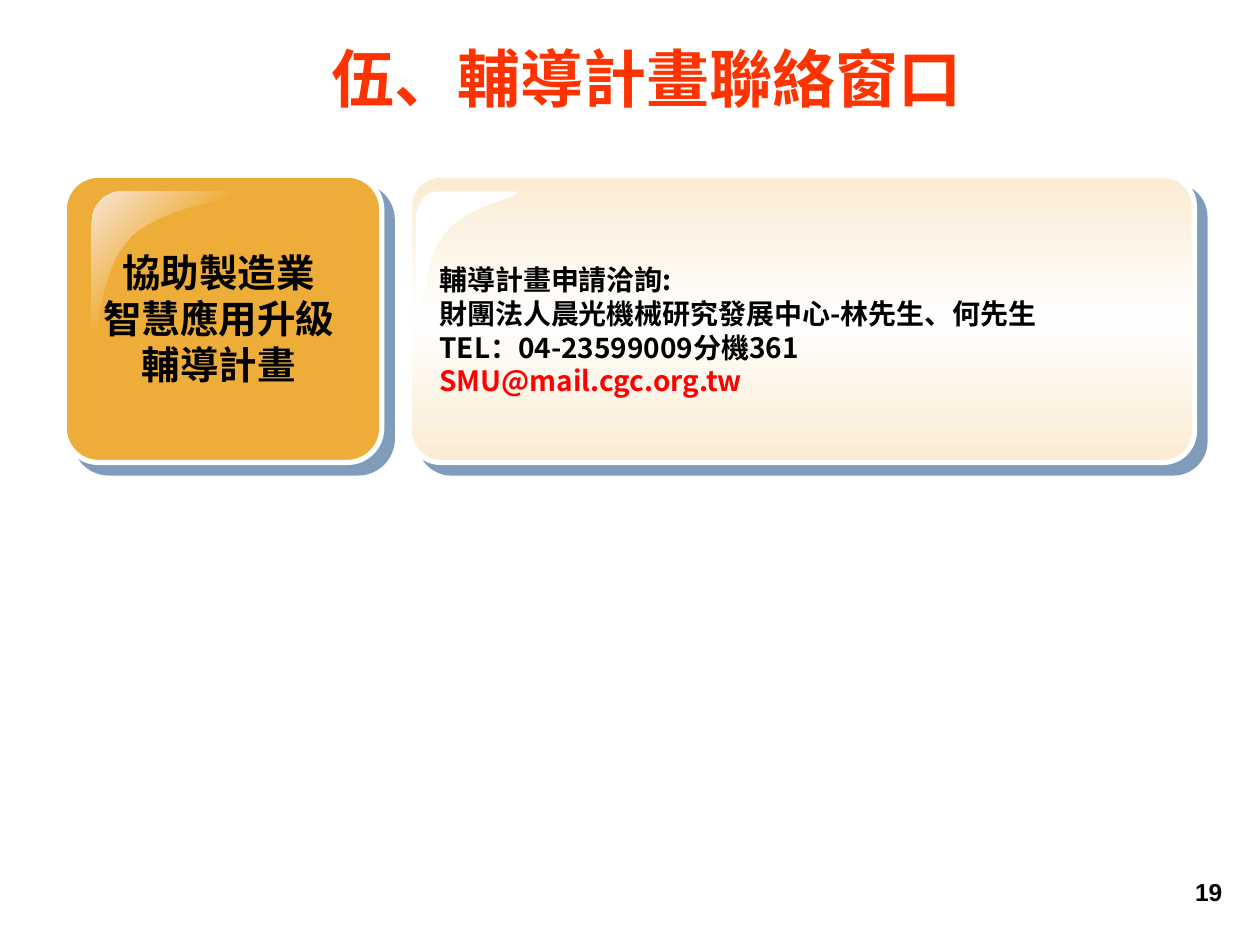
from dataclasses import dataclass

from lxml import etree
from pptx import Presentation
from pptx import util as u
from pptx.dml.color import RGBColor
from pptx.enum import shapes, text
from pptx.oxml import parse_xml
from pptx.oxml.ns import nsdecls, qn

PX = 9144  # 100 px to the inch


@dataclass(frozen=True)
class Theme:
    cjk: str = "Noto Sans CJK SC"
    latin: str = "Arial"
    title: str = "FF3300"
    ink: str = "000000"
    mail: str = "FF0000"
    white: str = "FFFFFF"
    amber: str = "EEAD38"
    cream: str = "FBEBD1"
    shine: str = "F9E5D3"
    shadow: str = "003B76"
    title_size: int = 36
    card_size: int = 22
    body_size: int = 16
    number_size: int = 14


THEME = Theme()

# Highlight outline as fractions of its width and height
GLOSS_START = (0.2, 0)
GLOSS_CORNER = ((0.09, 0), (0, 0.09), (0, 0.2))
GLOSS_FOOT = (0, 0.98)
GLOSS_SWEEP = (
    ((0.05, 1), (0.03, 0.52), (0.27, 0.29)),
    ((0.53, 0.07), (1.01, 0.05), (0.99, 0)),
)


def bezier(start, curve, steps=16):
    """Points along a cubic curve, without its start."""
    points = (start, *curve)
    for step in range(1, steps + 1):
        t = step / steps
        weights = ((1 - t) ** 3, 3 * t * (1 - t) ** 2, 3 * t * t * (1 - t), t ** 3)
        yield tuple(sum(w * p[axis] for w, p in zip(weights, points)) for axis in (0, 1))


def gloss_outline():
    outline = [GLOSS_START, *bezier(GLOSS_START, GLOSS_CORNER), GLOSS_FOOT]
    for curve in GLOSS_SWEEP:
        outline.extend(bezier(outline[-1], curve))
    return outline


class SlideBuilder:
    def __init__(self, page, theme):
        self.page = page
        self.theme = theme

    def paint(self, shape, fill, angle=0):
        """Fill with one colour, or with evenly spaced gradient colours."""
        if isinstance(fill, str):
            shape.fill.solid()
            shape.fill.fore_color.rgb = RGBColor.from_string(fill)
            return
        stops = "".join(
            f'<a:gs pos="{100000 * i // (len(fill) - 1)}"><a:srgbClr val="{colour}"/></a:gs>'
            for i, colour in enumerate(fill)
        )
        gradient = parse_xml(
            f'<a:gradFill {nsdecls("a")} rotWithShape="1"><a:gsLst>{stops}</a:gsLst>'
            f'<a:lin ang="{angle * 60000}" scaled="0"/></a:gradFill>'
        )
        properties = shape._element.spPr
        geometry = properties.find(qn("a:prstGeom"))
        if geometry is None:
            geometry = properties.find(qn("a:custGeom"))
        geometry.addnext(gradient)

    def card(self, left, top, width, height, corner, fill):
        card = self.page.shapes.add_shape(
            shapes.MSO_SHAPE.ROUNDED_RECTANGLE,
            left * PX, top * PX, width * PX, height * PX)
        card.adjustments[0] = corner
        self.paint(card, fill, 90)
        card.line.color.rgb = RGBColor.from_string(self.theme.white)
        card.line.width = u.Pt(3)
        card.shadow.inherit = False
        effects = card._element.spPr.find(qn("a:effectLst"))
        shadow = etree.SubElement(
            effects, qn("a:outerShdw"), blurRad="0", dist=str(u.Pt(8.5)),
            dir="2700000", algn="ctr", rotWithShape="0")
        colour = etree.SubElement(shadow, qn("a:srgbClr"), val=self.theme.shadow)
        etree.SubElement(colour, qn("a:alpha"), val="50000")

    def gloss(self, left, top, width, height, fill):
        points = [(round((left + x * width) * PX), round((top + y * height) * PX))
                  for x, y in gloss_outline()]
        builder = self.page.shapes.build_freeform(*points[0])
        builder.add_line_segments(points[1:], close=True)
        gloss = builder.convert_to_shape()
        self.paint(gloss, fill, 45)
        gloss.line.fill.background()
        gloss.shadow.inherit = False

    def set_text(self, box, lines, size, align, font, wrap=True):
        """Each line is a list of (words, colour, bold) runs."""
        frame = box.text_frame
        frame.word_wrap = wrap
        frame.auto_size = text.MSO_AUTO_SIZE.NONE
        frame.vertical_anchor = text.MSO_ANCHOR.MIDDLE
        frame.margin_left = frame.margin_right = 10 * PX
        frame.margin_top = frame.margin_bottom = 5 * PX
        for index, runs in enumerate(lines):
            para = frame.add_paragraph() if index else frame.paragraphs[0]
            para.alignment = align
            for words, colour, bold in runs:
                span = para.add_run()
                span.text = words
                span.font.size = u.Pt(size)
                span.font.bold = bold
                span.font.name = font
                span.font.color.rgb = RGBColor.from_string(colour)
                latin = span._r.rPr.find(qn("a:latin"))
                latin.addnext(latin.makeelement(qn("a:ea"), {"typeface": font}))

    def title(self, left, top, width, height, words):
        box = self.page.shapes.title
        box.left, box.top, box.width, box.height = (
            n * PX for n in (left, top, width, height))
        self.set_text(box, [[(words, self.theme.title, True)]], self.theme.title_size,
                      text.PP_ALIGN.CENTER, self.theme.cjk)

    def textbox(self, left, top, width, height, *style, **options):
        box = self.page.shapes.add_textbox(left * PX, top * PX, width * PX, height * PX)
        self.set_text(box, *style, **options)


def main():
    deck = Presentation()
    deck.slide_width, deck.slide_height = 1000 * PX, 750 * PX
    page = deck.slides.add_slide(deck.slide_layouts[5])
    slide = SlideBuilder(page, THEME)

    slide.title(83, 32, 860, 59, "伍、輔導計畫聯絡窗口")

    slide.card(51, 139, 252, 228, 0.119, THEME.amber)
    slide.gloss(73, 152, 118, 119, (THEME.shine, THEME.amber, THEME.shine))
    programme = ("協助製造業", "智慧應用升級", "輔導計畫")
    slide.textbox(71, 192, 205, 121, [[(line, THEME.ink, True)] for line in programme],
                  THEME.card_size, text.PP_ALIGN.CENTER, THEME.cjk, wrap=False)

    slide.card(325, 139, 623, 228, 0.109, (THEME.cream, THEME.white, THEME.cream))
    slide.gloss(330, 152, 82, 118, THEME.white)
    contact = (
        ("輔導計畫申請洽詢:", THEME.ink),
        ("財團法人晨光機械研究發展中心-林先生、何先生", THEME.ink),
        ("TEL：04-23599009分機361", THEME.ink),
        ("SMU@mail.cgc.org.tw", THEME.mail),
    )
    slide.textbox(339, 203, 626, 118, [[(line, colour, True)] for line, colour in contact],
                  THEME.body_size, text.PP_ALIGN.LEFT, THEME.cjk)

    slide.textbox(772, 683, 208, 50, [[("19", THEME.ink, True)]],
                  THEME.number_size, text.PP_ALIGN.RIGHT, THEME.latin, wrap=False)

    deck.save("out.pptx")


if __name__ == "__main__":
    main()
